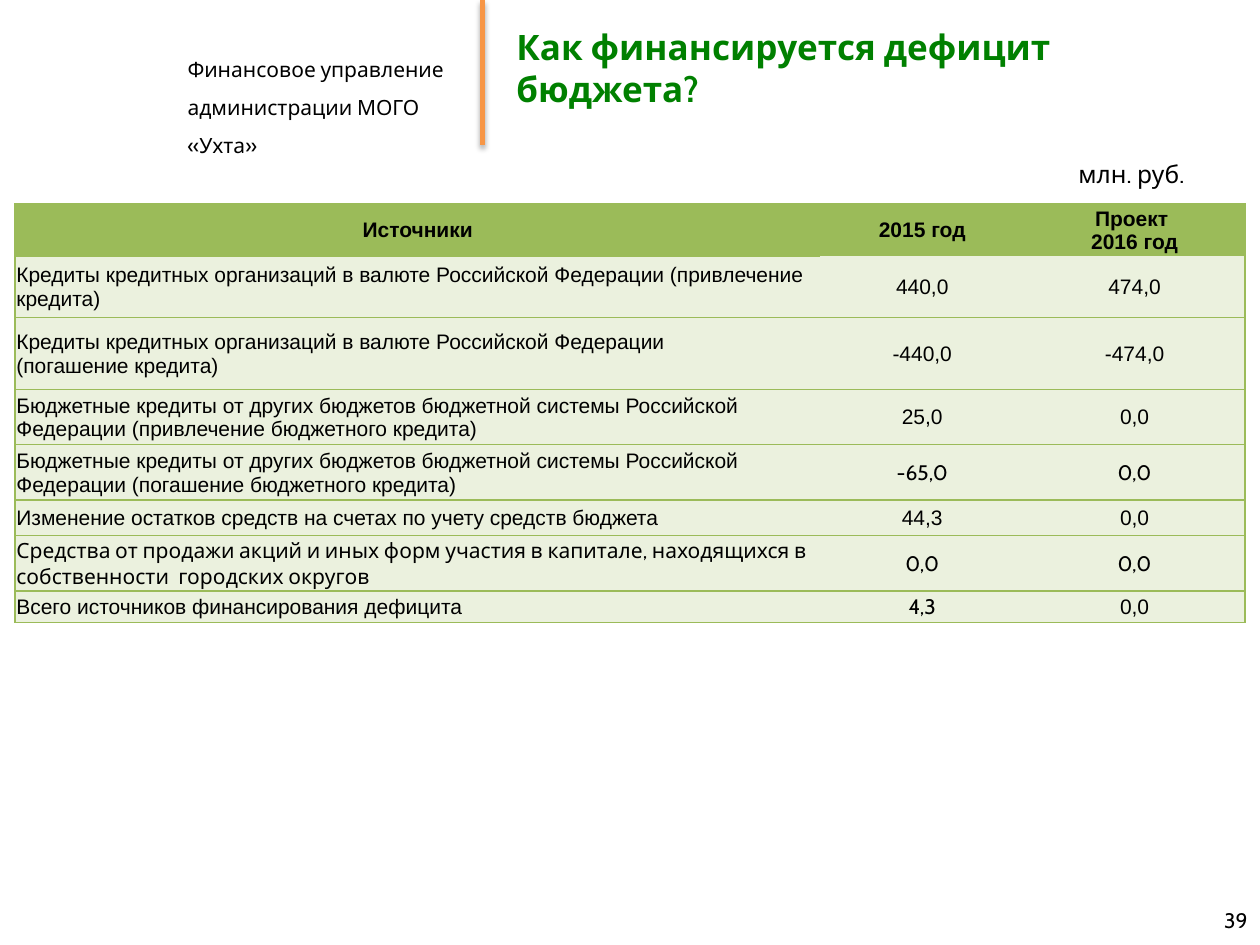
from dataclasses import dataclass
from typing import NamedTuple

from lxml import etree
from pptx import Presentation
from pptx import util as u
from pptx.dml.color import RGBColor
from pptx.enum import shapes, text
from pptx.oxml import ns


@dataclass(frozen=True)
class Theme:
    heading_font: str = "Cabin"
    table_font: str = "Arial"
    ink: str = "000000"
    title: str = "008000"
    accent: str = "F79646"
    header: str = "9BBB59"
    body: str = "EBF1DE"
    small: int = 12
    medium: int = 14
    large: int = 20


class Box(NamedTuple):
    """Left, top, width and height in grid units."""
    left: float
    top: float
    width: float
    height: float


class Row(NamedTuple):
    height: float
    cells: tuple[str, ...]
    heading_font_columns: tuple[int, ...] = ()


THEME = Theme()
COLUMNS, ROWS = 100, 75
SLIDE_WIDTH, SLIDE_HEIGHT = u.Inches(10), u.Inches(7.5)
NO_TABLE_STYLE = "{2D5ABB26-0587-4C30-8999-92F81FD0307C}"
ALIGN, ANCHOR = text.PP_ALIGN, text.MSO_ANCHOR

TABLE_BOX = Box(1.2, 16.2, 97.6, 32.2)
TABLE_COLUMNS = (63.9, 16.2, 17.5)
TABLE_ROWS = (
    Row(3.1, ("Источники", "2015 год", "Проект \n2016 год")),
    Row(4.9, ("Кредиты кредитных организаций в валюте Российской Федерации "
              "(привлечение кредита)", "440,0", "474,0")),
    Row(5.7, ("Кредиты кредитных организаций в валюте Российской Федерации\n"
              "(погашение кредита)", "-440,0", "-474,0")),
    Row(4.4, ("Бюджетные кредиты от других бюджетов бюджетной системы Российской "
              "Федерации (привлечение бюджетного кредита)", "25,0", "0,0")),
    Row(4.4, ("Бюджетные кредиты от других бюджетов бюджетной системы Российской "
              "Федерации (погашение бюджетного кредита)", "-65,0", "0,0"), (1, 2)),
    Row(2.8, ("Изменение остатков средств на счетах по учету средств бюджета",
              "44,3", "0,0")),
    Row(4.4, ("Средства от продажи акций и иных форм участия в капитале, находящихся в "
              "собственности  городских округов", "0,0", "0,0"), (0, 1, 2)),
    Row(2.5, ("Всего источников финансирования дефицита", "4,3", "0,0"), (1,)),
)


def across(columns: float) -> int:
    return round(SLIDE_WIDTH * columns / COLUMNS)


def down(rows: float) -> int:
    return round(SLIDE_HEIGHT * rows / ROWS)


def place(box: Box) -> tuple[int, int, int, int]:
    return across(box.left), down(box.top), across(box.width), down(box.height)


def write_text(frame, content: str, *, size: int = THEME.small,
               font: str = THEME.heading_font, color: str = THEME.ink,
               bold: bool = False, align=ALIGN.LEFT, line_spacing: float = 1.0) -> None:
    """Fill a text frame, one paragraph per line of content."""
    frame.word_wrap = True
    for index, line in enumerate(content.split("\n")):
        paragraph = frame.add_paragraph() if index else frame.paragraphs[0]
        paragraph.alignment = align
        paragraph.line_spacing = line_spacing
        run = paragraph.add_run()
        run.text = line
        run.font.size = u.Pt(size)
        run.font.name = font
        run.font.bold = bold
        run.font.color.rgb = RGBColor.from_string(color)


def add_text(slide, box: Box, content: str, *, anchor=ANCHOR.TOP, **text_format) -> None:
    frame = slide.shapes.add_textbox(*place(box)).text_frame
    frame.vertical_anchor = anchor
    write_text(frame, content, **text_format)


def add_divider(slide, column: float, height: float) -> None:
    """Draw the vertical accent line with its soft shadow."""
    line = slide.shapes.add_connector(shapes.MSO_CONNECTOR.STRAIGHT,
                                      across(column), 0, across(column), down(height))
    line.line.color.rgb = RGBColor.from_string(THEME.accent)
    line.line.width = u.Pt(3)
    effects = etree.SubElement(line._element.spPr, ns.qn("a:effectLst"))
    shadow = etree.SubElement(effects, ns.qn("a:outerShdw"), blurRad=str(u.Pt(3.1)),
                              dist=str(u.Pt(1.8)), dir="5400000", rotWithShape="0")
    color = etree.SubElement(shadow, ns.qn("a:srgbClr"), val=THEME.ink)
    etree.SubElement(color, ns.qn("a:alpha"), val="35000")


def add_borders(cell, sides: str) -> None:
    """Draw the named sides (L, R, T, B, in that order)."""
    properties = cell._tc.get_or_add_tcPr()
    for side in sides:
        border = etree.SubElement(properties, ns.qn(f"a:ln{side}"), w=str(u.Pt(1)))
        fill = etree.SubElement(border, ns.qn("a:solidFill"))
        etree.SubElement(fill, ns.qn("a:srgbClr"), val=THEME.header)


def border_sides(row: int, column: int) -> str:
    left = "L" if column == 0 else ""
    right = "R" if column == len(TABLE_COLUMNS) - 1 else ""
    top = "T" if row != 1 else ""
    bottom = "B" if row or column == 0 else ""
    return left + right + top + bottom


def add_sources_table(slide) -> None:
    table = slide.shapes.add_table(len(TABLE_ROWS), len(TABLE_COLUMNS),
                                   *place(TABLE_BOX)).table
    table.horz_banding = False
    table._tbl.tblPr.find(ns.qn("a:tableStyleId")).text = NO_TABLE_STYLE
    for column, width in zip(table.columns, TABLE_COLUMNS):
        column.width = across(width)
    for row_index, row in enumerate(TABLE_ROWS):
        table.rows[row_index].height = down(row.height)
        is_header = row_index == 0
        for column_index, content in enumerate(row.cells):
            cell = table.cell(row_index, column_index)
            cell.margin_left = cell.margin_right = cell.margin_top = u.Inches(0.01)
            cell.margin_bottom = 0
            cell.vertical_anchor = ANCHOR.MIDDLE
            add_borders(cell, border_sides(row_index, column_index))
            cell.fill.solid()
            cell.fill.fore_color.rgb = RGBColor.from_string(
                THEME.header if is_header else THEME.body)
            use_heading_font = column_index in row.heading_font_columns
            write_text(cell.text_frame, content, bold=is_header,
                       font=THEME.heading_font if use_heading_font else THEME.table_font,
                       align=ALIGN.CENTER if is_header or column_index else ALIGN.LEFT)


def main() -> None:
    presentation = Presentation()
    presentation.slide_width, presentation.slide_height = SLIDE_WIDTH, SLIDE_HEIGHT
    slide = presentation.slides.add_slide(presentation.slide_layouts[6])

    # Heading band
    add_text(slide, Box(13.9, 3, 25, 6.6),
             "Финансовое управление\nадминистрации МОГО «Ухта»", line_spacing=1.5)
    add_divider(slide, 38.3, 11.5)
    add_text(slide, Box(40, 0.3, 48.8, 10.1), "Как финансируется дефицит бюджета?",
             anchor=ANCHOR.MIDDLE, size=THEME.large, color=THEME.title, bold=True)

    # Deficit sources
    add_sources_table(slide)

    # Page number and unit
    add_text(slide, Box(76.7, 71, 23.3, 4), "39", anchor=ANCHOR.MIDDLE, align=ALIGN.RIGHT)
    add_text(slide, Box(84.6, 12.1, 11, 3.4), "млн. руб.", size=THEME.medium)

    presentation.save("out.pptx")


if __name__ == "__main__":
    main()
